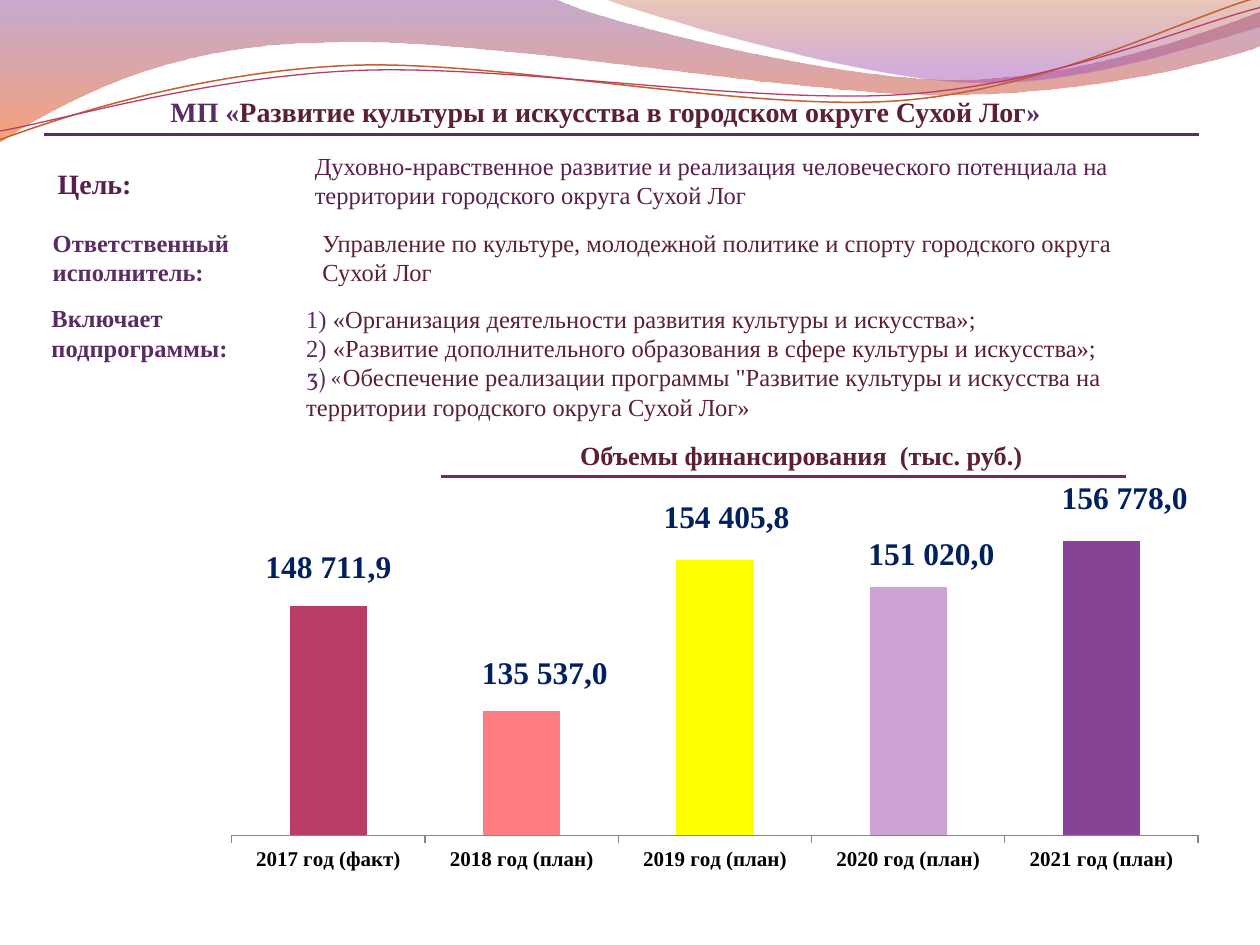
import pptx
import pptx.chart.data
import pptx.dml.color
import pptx.enum.chart
import pptx.enum.shapes
import pptx.enum.text
import pptx.oxml
import pptx.oxml.ns
import pptx.util
from lxml import etree

Inches = pptx.util.Inches
Pt = pptx.util.Pt
qn = pptx.oxml.ns.qn

COLORS = {
    "violet": "5A2C64", "plum": "591F4D", "wine": "5C1F34", "rule": "772754",
    "navy": "002060", "black": "000000", "axis": "868686", "white": "FFFFFF",
    "wave_violet": "834591", "wave_orange": "F35307", "wave_sand": "B74915",
    "wave_lilac": "A14BB4", "curve_orange": "C45F30", "curve_pink": "B83D68",
}
SERIF = "Times New Roman"

# Waves: start point, then cubic segments (two controls and an end) or line ends
LEFT_WAVE = [(0, -0.01), [(4.4, -0.01)],
             [(4.76, 0.17), (6.64, 0.63), (7.58, 0.63)],
             [(8.53, 0.63), (9.58, 0.26), (10, 0.09)], [(10.01, 0.36)],
             [(9.83, 0.44), (8.7, 0.76), (7.46, 0.75)],
             [(6.22, 0.75), (3.82, 0.28), (2.57, 0.34)],
             [(1.29, 0.35), (0.46, 0.83), (-0.01, 1.13)]]
RIGHT_WAVE = [(4.79, -0.01), [(5.09, 0.11), (6.82, 0.62), (7.69, 0.65)],
              [(8.56, 0.69), (9.61, 0.32), (10, 0.21)], [(10, 0)]]
ORANGE_CURVE = [(0, 1.11), [(0.48, 0.93), (1.58, 0.57), (2.77, 0.52)],
                [(3.95, 0.47), (5.93, 0.89), (7.13, 0.8)],
                [(8.33, 0.71), (9.38, 0.15), (9.98, -0.02)]]
PINK_CURVE = [(0, 1.04), [(0.47, 0.96), (1.64, 0.61), (2.83, 0.56)],
              [(4.03, 0.51), (5.97, 0.83), (7.17, 0.75)],
              [(8.36, 0.67), (9.41, 0.21), (10, 0.06)]]

# Year, amount, label, bar colour, label shift as a share of the chart
FUNDING = [
    ("2017 год (факт)", 148711.9, "148 711,9", "B83D68", (0, -0.03)),
    ("2018 год (план)", 135537, "135 537,0", "FF7C80", (0.02, -0.03)),
    ("2019 год (план)", 154405.8, "154 405,8", "FFFF00", (0.01, -0.04)),
    ("2020 год (план)", 151020, "151 020,0", "CDA3D6", (0.02, -0.02)),
    ("2021 год (план)", 156778, "156 778,0", "874396", (0.02, -0.04)),
]
CHART_AREA = (0.51, 3.12, 9.2, 4.09)
PLOT_AREA = (1.84, 4.09, 7.67, 2.54)


def rgb(name):
    return pptx.dml.color.RGBColor.from_string(COLORS.get(name, name))


def format_font(font, size, color, bold=False, face=SERIF):
    font.name, font.size, font.bold = face, Pt(size), bold
    font.color.rgb = rgb(color)


def write(box, paragraphs, at, size=14, color="violet", bold=False, align="LEFT"):
    """Place a box and fill it; a paragraph is a string or (text, colour, face) spans."""
    box.left, box.top, box.width, box.height = map(Inches, at)
    frame = box.text_frame
    frame.word_wrap = True
    frame.auto_size = pptx.enum.text.MSO_AUTO_SIZE.NONE
    frame.vertical_anchor = pptx.enum.text.MSO_ANCHOR.TOP
    for index, content in enumerate(paragraphs):
        para = frame.add_paragraph() if index else frame.paragraphs[0]
        para.alignment = getattr(pptx.enum.text.PP_ALIGN, align)
        para.space_before = Pt(0)
        properties = para._p.get_or_add_pPr()
        properties.set("marL", "0")
        properties.set("indent", "0")
        etree.SubElement(properties, qn("a:buNone"))
        spans = [(content, color, SERIF)] if isinstance(content, str) else content
        for text, span_color, face in spans:
            span = para.add_run()
            span.text = text
            format_font(span.font, size, span_color, bold, face)


def add_text(page, text, at, **style):
    write(page.shapes.add_textbox(0, 0, 0, 0), [text], at, **style)


def add_rule(page, left, right, top, color):
    rule = page.shapes.add_connector(
        pptx.enum.shapes.MSO_CONNECTOR.STRAIGHT,
        Inches(left), Inches(top), Inches(right), Inches(top))
    rule.line.color.rgb = rgb(color)
    rule.line.width = Pt(1.5)
    etree.SubElement(rule._element.spPr, qn("a:effectLst"))


def add_outline(page, outline, close):
    """Draw straight segments through all points, then bend the cubic ones."""
    start, *segments = outline
    points = [(x * 100, y * 100) for segment in segments for x, y in segment]
    builder = page.shapes.build_freeform(start[0] * 100, start[1] * 100,
                                         scale=Inches(0.01))
    builder.add_line_segments(points, close=close)
    shape = builder.convert_to_shape()
    shape.shadow.inherit = False
    lines = iter(list(shape._element.iter(qn("a:lnTo"))))
    for segment in segments:
        first, *others = [next(lines) for _ in segment]
        if others:
            cubic = etree.Element(qn("a:cubicBezTo"))
            first.addprevious(cubic)
            for line in (first, *others):
                cubic.append(line[0])
                line.getparent().remove(line)
    return shape


def add_wave(page, outline, stops):
    """Stops are (position, colour, opacity in percent), from top to bottom."""
    wave = add_outline(page, outline, True)
    wave.line.fill.background()
    wave.fill.gradient()
    wave.fill.gradient_angle = 270
    for stop, (position, color, _) in zip(wave.fill.gradient_stops, stops):
        stop.position = position
        stop.color.rgb = rgb(color)
    for tag, (_, _, opacity) in zip(wave._element.spPr.iter(qn("a:srgbClr")), stops):
        etree.SubElement(tag, qn("a:alpha"), val=str(opacity * 1000))


def add_curve(page, outline, color, width):
    curve = add_outline(page, outline, False)
    curve.fill.background()
    curve.line.color.rgb = rgb(color)
    curve.line.width = Pt(width)


def set_layout(parent, index, **values):
    for old in parent.findall(qn("c:layout")):
        parent.remove(old)
    layout = etree.Element(qn("c:layout"))
    manual = etree.SubElement(layout, qn("c:manualLayout"))
    for tag, value in values.items():
        etree.SubElement(manual, qn("c:" + tag), val=str(value))
    parent.insert(index, layout)


def add_funding_chart(page):
    data = pptx.chart.data.CategoryChartData(number_format="0.0")
    data.categories = [row[0] for row in FUNDING]
    data.add_series("Series 1", [row[1] for row in FUNDING])
    chart = page.shapes.add_chart(pptx.enum.chart.XL_CHART_TYPE.COLUMN_CLUSTERED,
                                  *map(Inches, CHART_AREA), data).chart
    chart.has_legend = chart.has_title = False
    format_font(chart.font, 18, "black", face="Vollkorn")
    amounts, years = chart.value_axis, chart.category_axis
    amounts.minimum_scale, amounts.maximum_scale = 120000, 160000
    amounts.has_major_gridlines = amounts.visible = False
    format_font(years.tick_labels.font, 12, "black", True)
    years.format.line.color.rgb = rgb("axis")
    plot = chart.plots[0]
    plot.gap_width, plot.vary_by_categories = 150, False
    left, top, width, height = CHART_AREA
    plot_left, plot_top, plot_width, plot_height = PLOT_AREA
    set_layout(chart._chartSpace.chart.plotArea, 0, layoutTarget="inner",
               xMode="edge", yMode="edge",
               x=(plot_left - left) / width, y=(plot_top - top) / height,
               w=plot_width / width, h=plot_height / height)
    series = plot.series[0]
    series.format.fill.solid()
    series.format.fill.fore_color.rgb = rgb(FUNDING[0][3])
    labels = series.data_labels
    labels.show_value = True
    labels.number_format, labels.number_format_is_linked = "0.0", False
    format_font(labels.font, 18, "navy", True)
    for index, (_, _, text, color, (shift_x, shift_y)) in enumerate(FUNDING):
        point = series.points[index]
        point.format.fill.solid()
        point.format.fill.fore_color.rgb = rgb(color)
        label = point.data_label
        span = label.text_frame.paragraphs[0].add_run()
        span.text = text
        format_font(span.font, 18, "navy", True)
        label.position = pptx.enum.chart.XL_LABEL_POSITION.OUTSIDE_END
        set_layout(label._get_or_add_dLbl(), 1, x=shift_x, y=shift_y)
    for leader in chart._chartSpace.iter(qn("c:showLeaderLines")):
        leader.set("val", "0")


def main():
    deck = pptx.Presentation()
    deck.slide_width, deck.slide_height = Inches(10), Inches(7.5)
    page = deck.slides.add_slide(deck.slide_layouts[1])
    page.background.fill.solid()
    page.background.fill.fore_color.rgb = rgb("white")

    add_wave(page, LEFT_WAVE, [(0, "wave_violet", 45), (1, "wave_orange", 55)])
    add_wave(page, RIGHT_WAVE, [(0, "wave_sand", 30), (0.8, "wave_lilac", 45)])
    add_curve(page, ORANGE_CURVE, "curve_orange", 0.85)
    add_curve(page, PINK_CURVE, "curve_pink", 0.75)

    title, body = page.shapes.title, page.placeholders[1]
    for holder in (title, body):  # bring the text in front of the waves
        page.shapes._spTree.append(holder._element)
    write(title, [[("МП «", "violet", SERIF),
                   ("Развитие культуры и искусства в городском округе Сухой Лог", "wine", SERIF),
                   ("»", "violet", SERIF)]],
          (0.59, 0.7, 8.43, 0.37), size=16, bold=True, align="CENTER")
    add_rule(page, 0.35, 9.52, 1.07, "violet")

    add_text(page, "Цель:", (0.36, 1.27, 1.18, 0.37), size=16, color="plum", bold=True)
    add_text(page, "Духовно-нравственное развитие и реализация человеческого потенциала "
             "на территории городского округа Сухой Лог", (2.4, 1.15, 6.93, 0.57), color="plum")
    add_text(page, "Ответственный исполнитель:", (0.32, 1.76, 1.81, 0.57), bold=True)
    add_text(page, "Управление по культуре, молодежной политике и спорту городского округа "
             "Сухой Лог", (2.46, 1.76, 6.82, 0.57), color="wine")
    add_text(page, "Включает подпрограммы:", (0.31, 2.36, 2.01, 0.57), bold=True)
    write(body, [
        [("1) ", "violet", SERIF),
         ("«Организация деятельности развития культуры и искусства»;", "wine", SERIF)],
        [("2) ", "violet", SERIF),
         ("«Развитие дополнительного образования в сфере культуры и искусства»;", "wine", SERIF)],
        [("3) «", "violet", "Vollkorn"),
         ("Обеспечение реализации программы \"Развитие культуры и искусства на "
          "территории городского округа Сухой Лог»", "wine", SERIF)],
    ], (2.33, 2.36, 7.04, 1.04))

    add_text(page, "Объемы финансирования  (тыс. руб.)", (4.26, 3.44, 4.2, 0.35),
             size=15, color="wine", bold=True, align="CENTER")
    add_rule(page, 3.5, 8.94, 3.78, "rule")
    add_funding_chart(page)
    deck.save("out.pptx")


if __name__ == "__main__":
    main()
